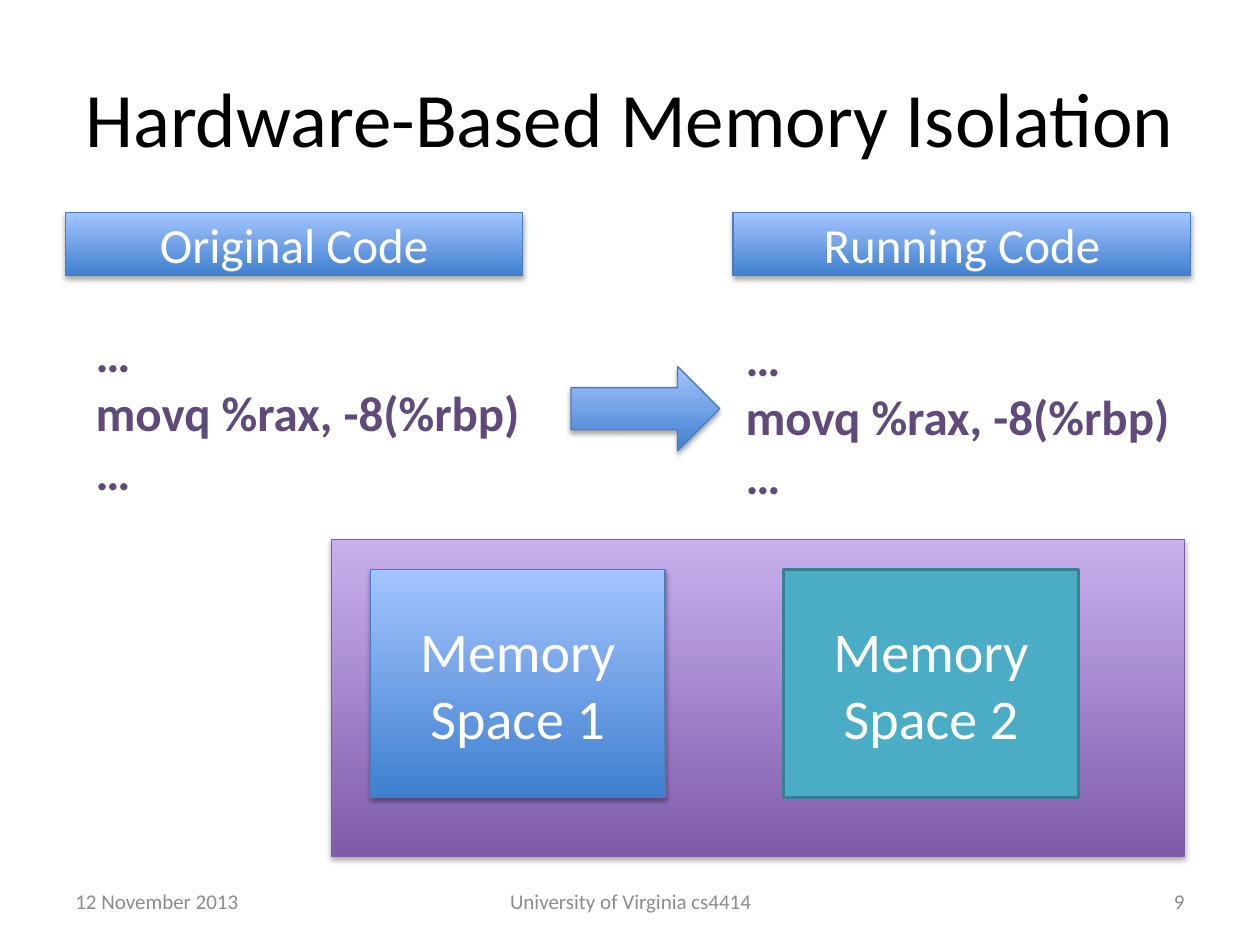
from lxml.etree import SubElement
from pptx import Presentation
from pptx.dml.color import RGBColor
from pptx.enum.shapes import MSO_SHAPE as Shape
from pptx.enum.text import MSO_ANCHOR as Anchor, MSO_AUTO_SIZE as AutoSize, PP_ALIGN as Align
from pptx.oxml.ns import qn
from pptx.util import Cm, Pt

FONT = "Calibri"
COLORS = {
    "black": "000000", "white": "FFFFFF", "gray": "8C8C8C", "code": "604A7B",
    "blue dark": "3F80CE", "blue light": "A4C4FF", "blue line": "4B7EBC",
    "purple dark": "7F5BAB", "purple light": "C8B0ED", "purple line": "7D60A0",
    "teal": "4BACC6", "teal line": "377F92",
}

TITLE = "Hardware-Based Memory Isolation"
CODE = "…\nmovq %rax, -8(%rbp)\n…"
HEADINGS = [("Original Code", 1.32), ("Running Code", 14.78)]
LISTINGS = [(1.68, 6.4), (14.78, 6.48)]
SPACES = [("Memory Space 1", 7.47, "blue"), ("Memory Space 2", 15.8, "teal")]
FOOTERS = [
    ("12 November 2013", 1.27, 5.92, Align.LEFT),
    ("University of Virginia cs4414", 8.69, 8.05, Align.CENTER),
    ("9", 18.21, 5.92, Align.RIGHT),
]


def rgb(name):
    return RGBColor.from_string(COLORS[name])


def write(frame, text, size, color, align, anchor=Anchor.MIDDLE, bold=False):
    frame.text = text
    frame.word_wrap = True
    frame.vertical_anchor = anchor
    for paragraph in frame.paragraphs:
        paragraph.alignment = align
        for run in paragraph.runs:
            run.font.name = FONT
            run.font.size = Pt(size)
            run.font.bold = bold
            run.font.color.rgb = rgb(color)


def add_shadow(shape):
    effects = shape._element.spPr.find(qn("a:effectLst"))
    shadow = SubElement(effects, qn("a:outerShdw"), blurRad=str(Pt(3.1)),
                        dist=str(Pt(1.8)), dir="5400000", rotWithShape="0")
    color = SubElement(shadow, qn("a:srgbClr"), val=COLORS["black"])
    SubElement(color, qn("a:alpha"), val="35000")


def add_block(slide, kind, box, hue, text="", size=28):
    block = slide.shapes.add_shape(kind, *map(Cm, box))
    block.shadow.inherit = False
    block.line.color.rgb = rgb(f"{hue} line")
    if hue == "teal":
        block.fill.solid()
        block.fill.fore_color.rgb = rgb(hue)
        block.line.width = Pt(2)
    else:
        block.fill.gradient()
        block.fill.gradient_angle = 90
        for stop, shade in zip(block.fill.gradient_stops, ("dark", "light")):
            stop.color.rgb = rgb(f"{hue} {shade}")
        block.line.width = Pt(0.75)
        add_shadow(block)
    if text:
        write(block.text_frame, text, size, "white", Align.CENTER)


def add_text(slide, box, *style, **options):
    frame = slide.shapes.add_textbox(*map(Cm, box)).text_frame
    write(frame, *style, **options)
    return frame


def main():
    deck = Presentation()
    deck.slide_width, deck.slide_height = Cm(25.4), Cm(19.05)
    slide = deck.slides.add_slide(deck.slide_layouts[5])

    title = slide.shapes.title
    title.left, title.top, title.width, title.height = map(Cm, (1.27, 0.76, 22.86, 3.18))
    write(title.text_frame, TITLE, 44, "black", Align.CENTER)

    for text, left, width, align in FOOTERS:
        add_text(slide, (left, 17.65, width, 1.02), text, 12, "gray", align)

    for text, left in HEADINGS:
        add_block(slide, Shape.RECTANGLE, (left, 4.29, 9.22, 1.27), "blue", text)

    for left, top in LISTINGS:
        frame = add_text(slide, (left, top, 9.19, 3.84), CODE, 28, "code",
                         Align.LEFT, anchor=Anchor.TOP, bold=True)
        frame.word_wrap = False
        frame.auto_size = AutoSize.SHAPE_TO_FIT_TEXT

    add_block(slide, Shape.RIGHT_ARROW, (11.51, 7.39, 3, 1.7), "blue")
    add_block(slide, Shape.RECTANGLE, (6.68, 10.87, 17.2, 6.4), "purple")
    for text, left, hue in SPACES:
        add_block(slide, Shape.RECTANGLE, (left, 11.48, 5.94, 4.6), hue, text, 32)

    deck.save("out.pptx")


if __name__ == "__main__":
    main()
